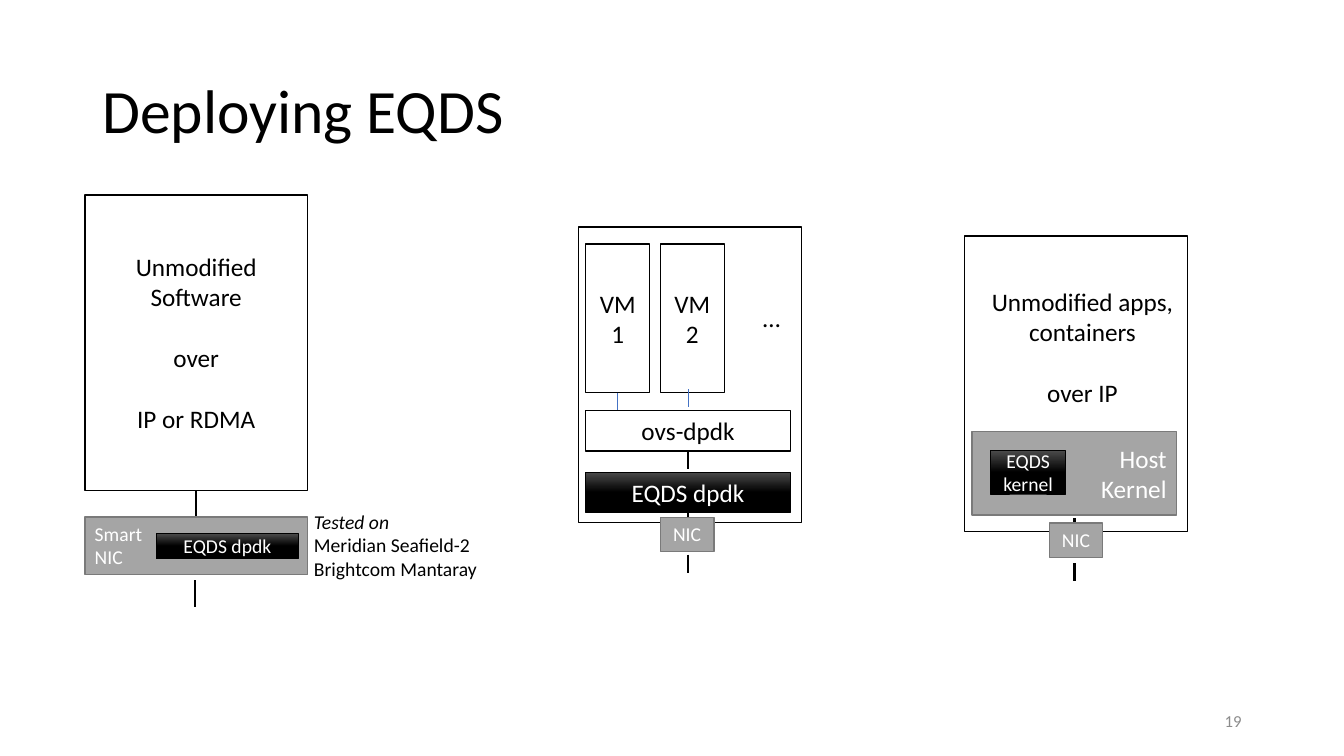
from lxml import etree
from pptx import Presentation
from pptx.dml.color import RGBColor
from pptx.enum.shapes import MSO_CONNECTOR, MSO_SHAPE
from pptx.enum.text import MSO_ANCHOR, PP_ALIGN
from pptx.oxml.ns import qn
from pptx.util import Pt

RECT = MSO_SHAPE.RECTANGLE
STRAIGHT = MSO_CONNECTOR.STRAIGHT
TOP, MIDDLE = MSO_ANCHOR.TOP, MSO_ANCHOR.MIDDLE
LEFT, CENTER, RIGHT = PP_ALIGN.LEFT, PP_ALIGN.CENTER, PP_ALIGN.RIGHT

BLACK = RGBColor(0x00, 0x00, 0x00)
WHITE = RGBColor(0xFF, 0xFF, 0xFF)
CHARCOAL = RGBColor(0x4B, 0x4B, 0x4B)
GRAY = RGBColor(0xA5, 0xA5, 0xA5)
DARK_GRAY = RGBColor(0x7A, 0x7A, 0x7A)
NUMBER_GRAY = RGBColor(0x8C, 0x8C, 0x8C)
BLUE = RGBColor(0x44, 0x72, 0xC4)

FONT = "Calibri"
BLANK_LINE = 22
PANEL_W, PANEL_H = 159.2, 211.2
BAR_W = 146.2
INSET = 5.2


def set_text(sp, text, size, color=BLACK, align=CENTER, anchor=MIDDLE, wrap=True, gaps=()):
    tf = sp.text_frame
    tf.text = text
    tf.word_wrap = wrap
    tf.vertical_anchor = anchor
    for i, p in enumerate(tf.paragraphs):
        p.alignment = align
        if i in gaps:
            p.space_before = Pt(BLANK_LINE)
        for r in p.runs:
            r.font.name = FONT
            r.font.size = Pt(size)
            r.font.color.rgb = color


def add_box(shapes, x, y, w, h, fill=WHITE, line=BLACK, weight=1):
    sp = shapes.add_shape(RECT, Pt(x), Pt(y), Pt(w), Pt(h))
    sp.shadow.inherit = False
    sp.fill.solid()
    sp.fill.fore_color.rgb = fill
    sp.line.color.rgb = line
    sp.line.width = Pt(weight)
    return sp


def add_eqds(shapes, x, y, w, h, text, size):
    sp = add_box(shapes, x, y, w, h, BLACK, BLACK, 0.5)
    sp.fill.gradient()
    sp.fill.gradient_angle = 270
    start, end = sp.fill.gradient_stops
    start.color.rgb, start.position = CHARCOAL, 0
    end.color.rgb, end.position = BLACK, 0.5
    set_text(sp, text, size, WHITE)


def add_nic(shapes, x, y):
    sp = add_box(shapes, x, y, 38.2, 24.5, GRAY, DARK_GRAY)
    set_text(sp, "NIC", 14, WHITE, anchor=TOP)


def add_link(shapes, x, y, length=12.8, color=BLACK, weight=1.5):
    cn = shapes.add_connector(STRAIGHT, Pt(x), Pt(y), Pt(x), Pt(y + length))
    cn.line.color.rgb = color
    cn.line.width = Pt(weight)
    etree.SubElement(cn._element.spPr, qn("a:effectLst"))


def add_label(shapes, x, y, w, h, text, size, **style):
    sp = shapes.add_textbox(Pt(x), Pt(y), Pt(w), Pt(h))
    set_text(sp, text, size, **style)
    return sp


def add_smart_nic_host(shapes, x, y):
    panel = add_box(shapes, x, y, PANEL_W, PANEL_H)
    set_text(panel, "Unmodified Software\nover\nIP or RDMA", 18, gaps=(1, 2))
    add_link(shapes, x + PANEL_W / 2, y + PANEL_H, 18.8)
    nic = add_box(shapes, x, y + 230, PANEL_W, 41.3, GRAY, DARK_GRAY)
    set_text(nic, "Smart\nNIC", 14, WHITE, LEFT, TOP)
    add_eqds(shapes, x + 51.1, y + 241.9, 101.5, 18, "EQDS dpdk", 14)
    add_link(shapes, x + 78.5, y + 275.2, 19)


def add_vm_host(shapes, x, y):
    add_box(shapes, x, y, PANEL_W, PANEL_H)
    left, mid = x + INSET, x + 78.5
    for i in range(2):
        vm = add_box(shapes, left + i * 53.3, y + 12, 45.6, 106.4)
        set_text(vm, f"VM{i + 1}", 18)
    add_label(shapes, x + 124.6, y + 50.4, 27.4, 29, "…", 18, align=LEFT, anchor=TOP, wrap=False)
    ovs = add_box(shapes, left, y + 131, BAR_W, 29)
    set_text(ovs, "ovs-dpdk", 18)
    add_eqds(shapes, left, y + 175, BAR_W, 29, "EQDS dpdk", 18)
    add_link(shapes, x + 28.1, y + 118.2, color=BLUE, weight=0.5)
    add_link(shapes, mid, y + 116, color=BLUE, weight=0.5)
    for dy in (160, 201.4, 234):
        add_link(shapes, mid, y + dy)
    add_nic(shapes, left + 53.3, y + 207.4)


def add_kernel_host(shapes, x, y):
    add_box(shapes, x, y, PANEL_W, PANEL_H)
    kernel = add_box(shapes, x + INSET, y + 139.7, BAR_W, 59.8, GRAY, DARK_GRAY)
    set_text(kernel, "Host\nKernel", 18, WHITE, RIGHT)
    add_eqds(shapes, x + 18.7, y + 153.4, 53.5, 31, "EQDS kernel", 14)
    for dy in (201.6, 234):
        add_link(shapes, x + 78.5, y + dy)
    add_nic(shapes, x + 60.5, y + 205.2)
    add_label(shapes, x + 11.5, y + 32.4, 145.4, 94.3,
              "Unmodified apps,\ncontainers\nover IP", 18, anchor=TOP, wrap=False, gaps=(2,))


def main():
    prs = Presentation()
    prs.slide_width, prs.slide_height = Pt(960), Pt(540)
    slide = prs.slides.add_slide(prs.slide_layouts[5])
    shapes = slide.shapes

    title = shapes.title
    title.left, title.top, title.width, title.height = Pt(66), Pt(28.8), Pt(828), Pt(104.4)
    set_text(title, "Deploying EQDS", 44, align=LEFT)
    title.text_frame.paragraphs[0].line_spacing = 0.9

    hosts = [(add_vm_host, 413.2, 162.2), (add_smart_nic_host, 60.6, 139.2),
             (add_kernel_host, 689, 168.5)]
    for add_host, x, y in hosts:
        add_host(shapes.add_group_shape().shapes, x, y)

    tested = add_label(shapes, 217.2, 360.5, 133.2, 58.5,
                       "Tested on\nMeridian Seafield-2\nBrightcom Mantaray", 14,
                       align=LEFT, anchor=TOP, wrap=False)
    tested.text_frame.paragraphs[0].runs[0].font.italic = True
    add_label(shapes, 678, 500.5, 216, 28.8, "19", 12, color=NUMBER_GRAY, align=RIGHT)

    prs.save("out.pptx")


main()
